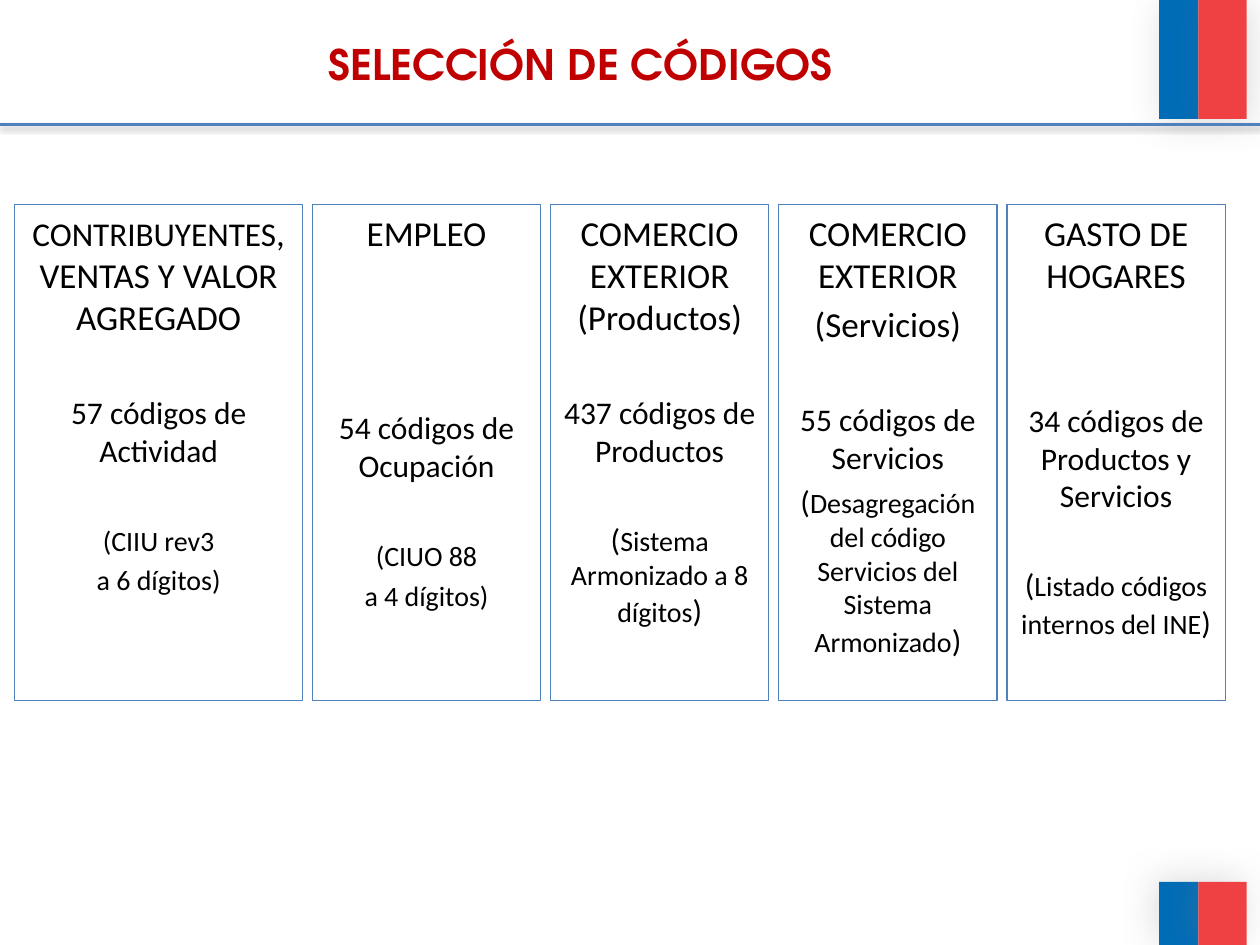
from lxml import etree
from pptx import Presentation
from pptx import util as u
from pptx.dml.color import RGBColor
from pptx.enum import shapes, text
from pptx.oxml import ns

FLAG_BLUE = RGBColor(0x00, 0x6C, 0xB7)
FLAG_RED = RGBColor(0xEF, 0x41, 0x44)
TITLE_RED = RGBColor(0xC0, 0x00, 0x00)
RULE_BLUE = RGBColor(0x4F, 0x81, 0xBD)
BLACK = RGBColor(0x00, 0x00, 0x00)
SHADOW_GREY = "808080"

COLUMN_GAP = 0.2
COLUMNS = [
    (5.8, [
        (0, [("CONTRIBUYENTES", 19), (", VENTAS Y VALOR AGREGADO", 20)]),
        (32, [("57 códigos de Actividad", 18)]),
        (31.1, [("(CIIU rev3", 16)]),
        (3.6, [("a 6 dígitos)", 16)]),
    ]),
    (4.6, [
        (0, [("EMPLEO", 20)]),
        (88.8, [("54 códigos de Ocupación", 18)]),
        (31.1, [("(CIUO 88", 16)]),
        (3.6, [("a 4 dígitos)", 16)]),
    ]),
    (4.4, [
        (0, [("COMERCIO EXTERIOR (Productos)", 20)]),
        (32, [("437 códigos de Productos", 18)]),
        (29.2, [("(", 18), ("Sistema Armonizado a 8 dígitos", 16), (")", 18)]),
    ]),
    (4.4, [
        (0, [("COMERCIO EXTERIOR", 20)]),
        (4, [("(Servicios)", 20)]),
        (32, [("55 códigos de Servicios", 18)]),
        (3.6, [("(", 18),
               ("Desagregación del código Servicios del Sistema Armonizado", 16),
               (")", 18)]),
    ]),
    (4.4, [
        (0, [("GASTO DE HOGARES", 20)]),
        (60.4, [("34 códigos de Productos y Servicios", 18)]),
        (29.2, [("(", 18), ("Listado códigos internos del INE", 16), (")", 18)]),
    ]),
]


def set_format(target, values):
    """Set every attribute of the dict on the target."""
    for name, value in values.items():
        setattr(target, name, value)


def cast_shadow(spot, alpha, blur, distance, angle):
    """Give a shape or connector an outer shadow, in percent, points and degrees."""
    effects = etree.SubElement(spot._element.spPr, ns.qn("a:effectLst"))
    shadow = etree.SubElement(effects, ns.qn("a:outerShdw"), {
        "blurRad": str(u.Pt(blur)), "dist": str(u.Pt(distance)),
        "dir": str(angle * 60000), "rotWithShape": "0"})
    tone = etree.SubElement(shadow, ns.qn("a:srgbClr"), val=SHADOW_GREY)
    etree.SubElement(tone, ns.qn("a:alpha"), val=str(alpha * 1000))


def add_run(paragraph, wording, font_values):
    """Append a run with the given font values."""
    run = paragraph.add_run()
    run.text = wording
    color = font_values.pop("color")
    set_format(run.font, font_values)
    run.font.color.rgb = color


def add_flag(slide, left, top, height, angle):
    """Place the blue and red bands side by side."""
    blue_width, red_width = 0.79, 0.97
    for offset, width, color in ((0, blue_width, FLAG_BLUE),
                                 (blue_width, red_width, FLAG_RED)):
        band = slide.shapes.add_shape(
            shapes.MSO_SHAPE.RECTANGLE,
            u.Cm(left + offset), u.Cm(top), u.Cm(width), u.Cm(height))
        band.fill.solid()
        band.fill.fore_color.rgb = color
        band.line.fill.background()
        cast_shadow(band, 25, 20, 3, angle)


def add_title(slide, left, top, width, height):
    """Place the centred slide title."""
    title = slide.shapes.add_textbox(u.Cm(left), u.Cm(top), u.Cm(width), u.Cm(height))
    set_format(title.text_frame, {
        "word_wrap": True, "vertical_anchor": text.MSO_ANCHOR.MIDDLE})
    heading = title.text_frame.paragraphs[0]
    heading.alignment = text.PP_ALIGN.CENTER
    add_run(heading, "SELECCIÓN DE CÓDIGOS", {
        "name": "TeX Gyre Adventor", "size": u.Pt(24), "bold": True, "color": TITLE_RED})


def add_rule(slide, left, top, width):
    """Draw the line below the title."""
    rule = slide.shapes.add_connector(
        shapes.MSO_CONNECTOR.STRAIGHT,
        u.Cm(left), u.Cm(top), u.Cm(left + width), u.Cm(top))
    rule.line.color.rgb = RULE_BLUE
    rule.line.width = u.Pt(2)
    cast_shadow(rule, 38, 3.1, 1.6, 90)


def add_column(slide, left, top, width, height, entries):
    """Place one outlined column with its paragraphs."""
    column = slide.shapes.add_shape(
        shapes.MSO_SHAPE.RECTANGLE, u.Cm(left), u.Cm(top), u.Cm(width), u.Cm(height))
    column.fill.background()
    column.line.color.rgb = RULE_BLUE
    column.line.width = u.Pt(0.75)
    column.shadow.inherit = False
    frame = column.text_frame
    set_format(frame, {"word_wrap": True, "vertical_anchor": text.MSO_ANCHOR.TOP})
    for index, (gap, runs) in enumerate(entries):
        entry = frame.add_paragraph() if index else frame.paragraphs[0]
        set_format(entry, {
            "alignment": text.PP_ALIGN.CENTER, "space_before": u.Pt(gap)})
        for wording, size in runs:
            add_run(entry, wording, {
                "name": "Calibri", "size": u.Pt(size), "color": BLACK})


def add_columns(slide, left, top, height):
    """Set the columns in a row with equal gaps."""
    for width, entries in COLUMNS:
        add_column(slide, left, top, width, height, entries)
        left += width + COLUMN_GAP


def main():
    """Build the slide and save it."""
    deck = Presentation()
    set_format(deck, {"slide_width": u.Cm(25.4), "slide_height": u.Cm(19.05)})
    slide = deck.slides.add_slide(deck.slide_layouts[6])
    add_flag(slide, 23.37, 0, 2.4, 45)
    add_flag(slide, 23.37, 17.78, 1.27, 215)
    add_title(slide, 1.1, 0.66, 21.2, 1.24)
    add_columns(slide, 0.3, 4.13, 10)
    add_rule(slide, 0, 2.51, 25.4)
    deck.save("out.pptx")


if __name__ == "__main__":
    main()
